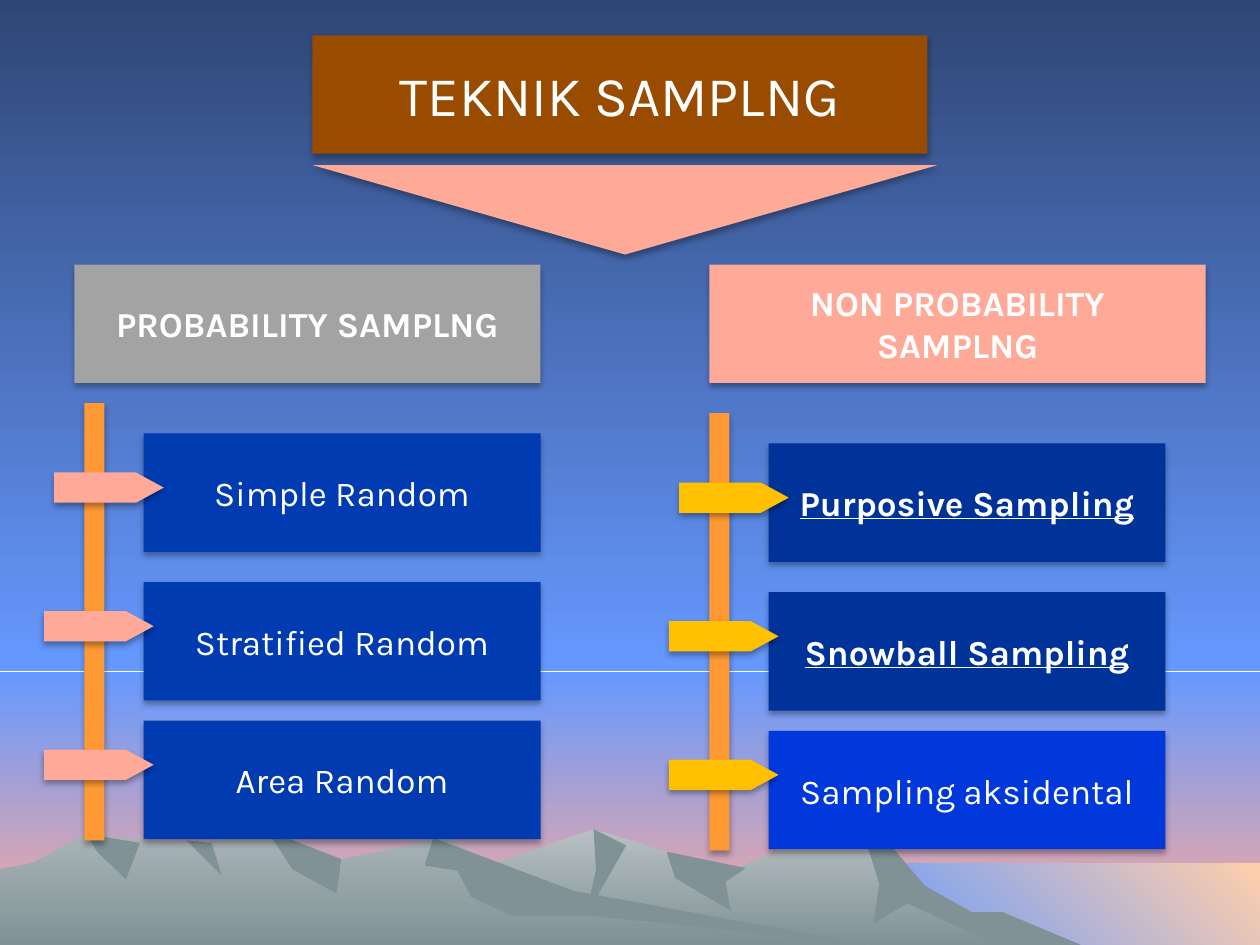
from pptx import Presentation
from pptx.dml.color import RGBColor
from pptx.enum.shapes import MSO_SHAPE
from pptx.enum.text import MSO_ANCHOR, MSO_AUTO_SIZE, PP_ALIGN
from pptx.oxml import parse_xml
from pptx.oxml.ns import nsdecls, qn
from pptx.util import Inches, Pt

THEME = {
    "font": "Karla", "title_size": 32, "label_size": 20, "text": "FFFFFF",
    "title": "994C00", "salmon": "FFAA99", "gray": "A3A3A3", "amber": "FFC000",
    "rail": "FF9933", "blue": "003BB2", "navy": "003399", "bright": "0038DC",
    "sky": ("2F4675", "6699FF"), "dusk": ("6699FF", "FFAA99"),
    "sea": ("6699FF", "FFCFAB"), "far_ridge": ("B8C0C2", "809296"),
    "near_ridge": ("ABB5B7", "809296"), "crag": ("809296", "809296"),
}
SHADOW = (
    f'<a:outerShdw {nsdecls("a")} blurRad="{Pt(3.5)}" dist="{Pt(2.2)}" dir="5400000" '
    'rotWithShape="0"><a:srgbClr val="000000"><a:alpha val="32000"/></a:srgbClr></a:outerShdw>'
)


def dress(panel, left, top, width, height, color):
    panel.left, panel.top = Inches(left), Inches(top)
    panel.width, panel.height = Inches(width), Inches(height)
    panel.fill.solid()
    panel.fill.fore_color.rgb = RGBColor.from_string(THEME[color])
    panel.line.fill.background()
    panel.shadow.inherit = False
    panel._element.spPr.find(qn("a:effectLst")).append(parse_xml(SHADOW))


def write(panel, text, size, bold=False, underline=False):
    frame = panel.text_frame
    frame.text = text
    frame.word_wrap = False
    frame.auto_size = MSO_AUTO_SIZE.NONE
    frame.vertical_anchor = MSO_ANCHOR.MIDDLE
    for paragraph in frame.paragraphs:
        paragraph.alignment = PP_ALIGN.CENTER
        font = paragraph.font
        font.name, font.size = THEME["font"], Pt(THEME[size])
        font.bold, font.underline = bold, underline
        font.color.rgb = RGBColor.from_string(THEME["text"])


deck = Presentation()
deck.slide_width, deck.slide_height = Inches(10), Inches(7.5)
slide = deck.slides.add_slide(deck.slide_layouts[5])
shapes = slide.shapes

scenery = []
for colors, angle, left, top, bottom in [
    ("dusk", 270, 0, 5.33, 7.5),
    ("sky", 270, 0, 0, 5.33),
    ("sea", 45, 6.83, 6.85, 7.5),
]:
    band = shapes.add_shape(
        MSO_SHAPE.RECTANGLE, Inches(left), Inches(top), Inches(10 - left), Inches(bottom - top))
    scenery.append((band, colors, angle))

for colors, outline in [
    ("far_ridge", [(2.58, 7.5), (3.94, 6.85), (4.71, 6.58), (5.29, 6.76), (5.66, 6.97),
                   (6.29, 6.71), (6.85, 6.6), (7.23, 6.98), (8.2, 7.5)]),
    ("crag", [(6.85, 6.6), (6.98, 7.02), (6.93, 7.33), (7.2, 7.17), (7.92, 7.5), (8.58, 7.5),
              (7.96, 7.24), (7.71, 7.24), (7.34, 7.03), (7.07, 6.71)]),
    ("crag", [(4.71, 6.58), (4.73, 6.9), (4.65, 7.27), (4.97, 6.71)]),
    ("crag", [(5.29, 6.76), (5.36, 6.97), (5.8, 7.23), (5.76, 7), (5.92, 6.89)]),
    ("near_ridge", [(0, 7.5), (0, 6.9), (0.26, 6.85), (0.68, 6.62), (1.6, 6.71), (2.08, 6.58),
                    (2.71, 6.82), (3.54, 6.65), (4.32, 7.12), (6.9, 7.5)]),
    ("crag", [(2.12, 6.59), (2.32, 6.9), (2.67, 7.09), (2.71, 6.82)]),
    ("crag", [(3.44, 6.65), (3.37, 6.87), (3.63, 6.91), (3.74, 7.12), (4.07, 7.27),
              (4.72, 7.27), (6.9, 7.5), (4.55, 7.07)]),
    ("crag", [(1.48, 6.67), (1.76, 6.95), (1.68, 6.69)]),
    ("crag", [(0.69, 6.62), (0.77, 6.76), (1, 6.98), (1.11, 6.69)]),
]:
    points = [(Inches(x), Inches(y)) for x, y in outline]
    builder = shapes.build_freeform(*points[0])
    builder.add_line_segments(points[1:])
    scenery.append((builder.convert_to_shape(), colors, 270))

for land, colors, angle in scenery:
    land.fill.gradient()
    land.fill.gradient_angle = angle
    for stop, position, color in zip(land.fill.gradient_stops, (0, 1), THEME[colors]):
        stop.position = position
        stop.color.rgb = RGBColor.from_string(color)
    land.line.fill.background()
    land.shadow.inherit = False

title = shapes.title
shapes._spTree.append(title._element)
dress(title, 2.48, 0.28, 4.88, 0.94, "title")
write(title, "TEKNIK SAMPLNG", "title_size")

BRANCHES = [
    (0, 0, 0.59, 3.7, "PROBABILITY SAMPLNG", "gray", "salmon", [
        ("Simple Random", "blue", False),
        ("Stratified Random", "blue", False),
        ("Area Random", "blue", False)]),
    (4.96, 0.08, 5.63, 3.94, "NON PROBABILITY\nSAMPLNG", "salmon", "amber", [
        ("Purposive Sampling", "navy", True),
        ("Snowball Sampling", "navy", True),
        ("Sampling aksidental", "bright", False)]),
]
for dx, dy, left, width, name, head_color, pointer_color, methods in BRANCHES:
    heading = shapes.add_shape(MSO_SHAPE.RECTANGLE, 0, 0, 0, 0)
    dress(heading, left, 2.1, width, 0.94, head_color)
    write(heading, name, "label_size", bold=True)

    for (method, color, strong), drop in zip(methods, (0, 1.18, 2.28)):
        method_box = shapes.add_shape(MSO_SHAPE.RECTANGLE, 0, 0, 0, 0)
        dress(method_box, 1.14 + dx, 3.44 + dy + drop, 3.15, 0.94, color)
        write(method_box, method, "label_size", bold=strong, underline=strong)

    rail = shapes.add_shape(MSO_SHAPE.RECTANGLE, 0, 0, 0, 0)
    dress(rail, 0.67 + dx, 3.2 + dy, 0.16, 3.47, "rail")

    for row, pointer_left in enumerate((0.43, 0.35, 0.35)):
        pointer = shapes.add_shape(MSO_SHAPE.PENTAGON, 0, 0, 0, 0)
        dress(pointer, pointer_left + dx, 3.75 + dy + 1.1 * row, 0.87, 0.24, pointer_color)
        pointer.adjustments[0] = 0.92

funnel = shapes.add_shape(MSO_SHAPE.ISOSCELES_TRIANGLE, 0, 0, 0, 0)
dress(funnel, 2.48, 1.31, 4.96, 0.71, "salmon")
funnel.rotation = 180

deck.save("out.pptx")
